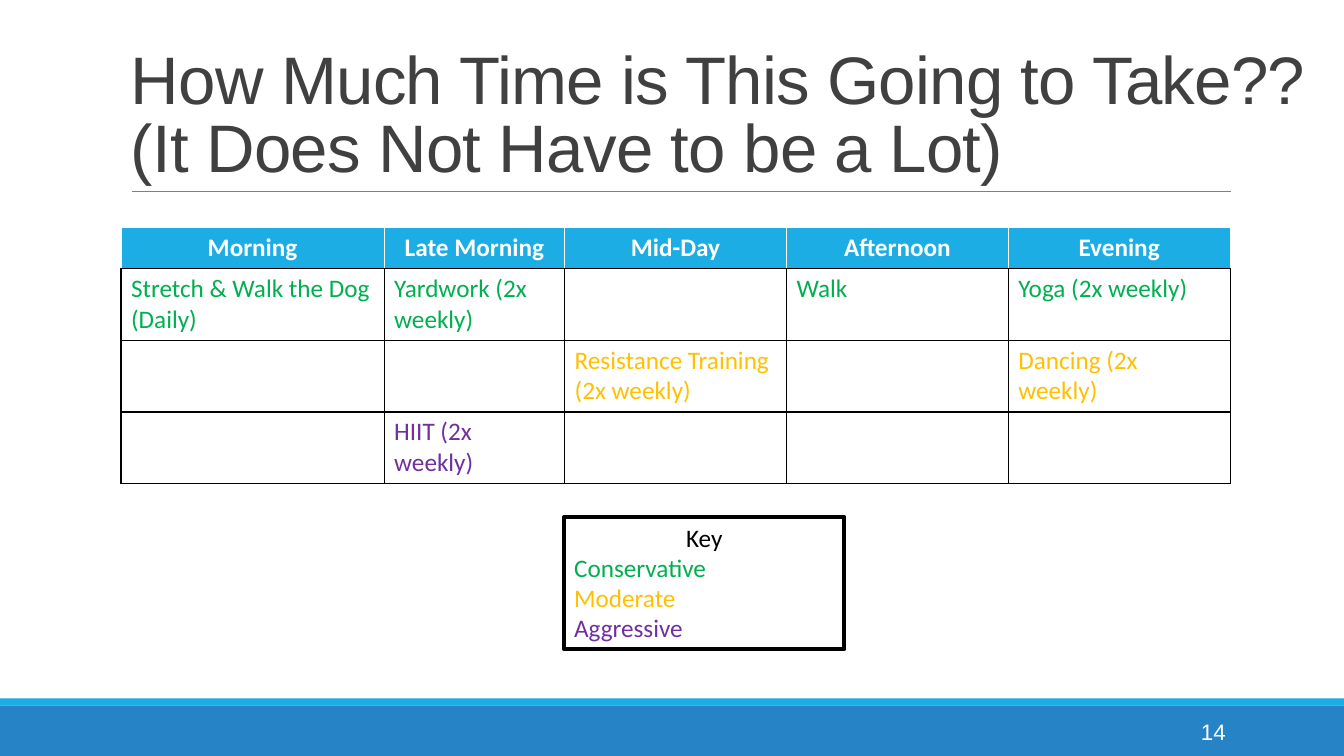
from lxml import etree
from pptx import Presentation
from pptx.dml.color import RGBColor
from pptx.enum.shapes import MSO_CONNECTOR as Connector, MSO_SHAPE as Shape
from pptx.enum.text import MSO_ANCHOR as Anchor, PP_ALIGN as Align
from pptx.oxml import parse_xml
from pptx.oxml.ns import nsdecls, qn
from pptx.util import Cm, Pt

WIDTH, HEIGHT = 33.87, 19.05
BLUE, CYAN = "2683C6", "1CADE4"
WHITE, BLACK = "FFFFFF", "000000"
LEVELS = {"Conservative": "00B050", "Moderate": "FFC000", "Aggressive": "7030A0"}

PERIODS = ["Morning", "Late Morning", "Mid-Day", "Afternoon", "Evening"]
COLUMN_WIDTHS = [6.63, 4.55, 5.59, 5.59, 5.59]
HEADER_HEIGHT, ROW_HEIGHT = 1.02, 1.81
ACTIVITIES = {
    "Conservative": ["Stretch & Walk the Dog (Daily)", "Yardwork (2x weekly)", "",
                     "Walk", "Yoga (2x weekly)"],
    "Moderate": ["", "", "Resistance Training (2x weekly)", "", "Dancing (2x weekly)"],
    "Aggressive": ["", "HIIT (2x weekly)", "", "", ""],
}


def color(hex_string):
    return RGBColor.from_string(hex_string)


def add_run(paragraph, text, size, hex_string, font="Calibri", bold=False):
    run = paragraph.add_run()
    run.text = text
    run.font.size = Pt(size)
    run.font.name = font
    run.font.bold = bold
    run.font.color.rgb = color(hex_string)
    return run


def add_text_box(slide, box, anchor):
    frame = slide.shapes.add_textbox(*map(Cm, box)).text_frame
    frame.word_wrap = True
    frame.vertical_anchor = anchor
    return frame.paragraphs[0]


def add_rectangle(slide, box):
    shape = slide.shapes.add_shape(Shape.RECTANGLE, *map(Cm, box))
    shape.shadow.inherit = False
    return shape


def add_title(slide, box):
    """Title anchored to the bottom of its box, with a thin rule under it."""
    left, top, width, height = box
    paragraph = add_text_box(slide, box, Anchor.BOTTOM)
    paragraph.line_spacing = 0.85
    run = add_run(paragraph, "How Much Time is This Going to Take?? "
                  "(It Does Not Have to be a Lot)", 48, "404040", "Arial")
    run.font._element.set("spc", "-50")

    rule_left, rule_top = Cm(left + 0.28), Cm(top + height)
    rule = slide.shapes.add_connector(
        Connector.STRAIGHT, rule_left, rule_top, rule_left + Cm(27.68), rule_top)
    rule.line.color.rgb = color("808080")
    rule.line.width = Pt(0.5)
    etree.SubElement(rule._element.spPr, qn("a:effectLst"))


def set_borders(cell, sides, bottom):
    """Draw 1 pt borders; must run before the cell is filled."""
    properties = cell._tc.get_or_add_tcPr()
    for side, hex_string in zip("LRTB", [sides, sides, sides, bottom]):
        properties.append(parse_xml(
            f'<a:ln{side} {nsdecls("a")} w="{Pt(1)}"><a:solidFill>'
            f'<a:srgbClr val="{hex_string}"/></a:solidFill></a:ln{side}>'))


def add_schedule(slide, left, top):
    height = HEADER_HEIGHT + ROW_HEIGHT * len(ACTIVITIES)
    table = slide.shapes.add_table(
        len(ACTIVITIES) + 1, len(PERIODS), Cm(left), Cm(top),
        Cm(sum(COLUMN_WIDTHS)), Cm(height)).table
    for column, width in zip(table.columns, COLUMN_WIDTHS):
        column.width = Cm(width)
    for index, row in enumerate(table.rows):
        row.height = Cm(ROW_HEIGHT if index else HEADER_HEIGHT)

    for index, period in enumerate(PERIODS):
        cell = table.cell(0, index)
        set_borders(cell, WHITE, BLACK)
        cell.fill.solid()
        cell.fill.fore_color.rgb = color(CYAN)
        paragraph = cell.text_frame.paragraphs[0]
        paragraph.alignment = Align.CENTER
        add_run(paragraph, period, 18, WHITE, bold=True)

    for row_index, (level, activities) in enumerate(ACTIVITIES.items(), 1):
        for column_index, activity in enumerate(activities):
            cell = table.cell(row_index, column_index)
            set_borders(cell, BLACK, BLACK)
            cell.fill.background()
            if activity:
                add_run(cell.text_frame.paragraphs[0], activity, 18, LEVELS[level])


def add_key(slide, box):
    shape = add_rectangle(slide, box)
    shape.fill.background()
    shape.line.color.rgb = color(BLACK)
    shape.line.width = Pt(3)
    frame = shape.text_frame
    frame.word_wrap = True
    frame.vertical_anchor = Anchor.TOP
    heading = frame.paragraphs[0]
    heading.alignment = Align.CENTER
    add_run(heading, "Key", 18, BLACK)
    for level, hex_string in LEVELS.items():
        paragraph = frame.add_paragraph()
        paragraph.alignment = Align.LEFT
        add_run(paragraph, level, 18, hex_string)


def add_footer(slide, top, number):
    """Two full-width bars down to the slide's edge, with the slide number."""
    stripe = 0.18
    bars = [(top, stripe, CYAN), (top + stripe, HEIGHT - top - stripe, BLUE)]
    for bar_top, bar_height, hex_string in bars:
        bar = add_rectangle(slide, (0, bar_top, WIDTH, bar_height))
        bar.fill.solid()
        bar.fill.fore_color.rgb = color(hex_string)
        bar.line.fill.background()
    paragraph = add_text_box(slide, (27.51, top + 0.33, 3.63, 1.02), Anchor.MIDDLE)
    paragraph.alignment = Align.RIGHT
    add_run(paragraph, str(number), 16, WHITE, "Arial")


def main():
    presentation = Presentation()
    presentation.slide_width, presentation.slide_height = Cm(WIDTH), Cm(HEIGHT)
    slide = presentation.slides.add_slide(presentation.slide_layouts[6])
    add_footer(slide, 17.6, 14)
    add_title(slide, (3.05, 0.79, 30.81, 4.03))
    add_schedule(slide, 3.05, 5.74)
    add_key(slide, (14.22, 13.03, 7.06, 3.33))
    presentation.save("out.pptx")


if __name__ == "__main__":
    main()
